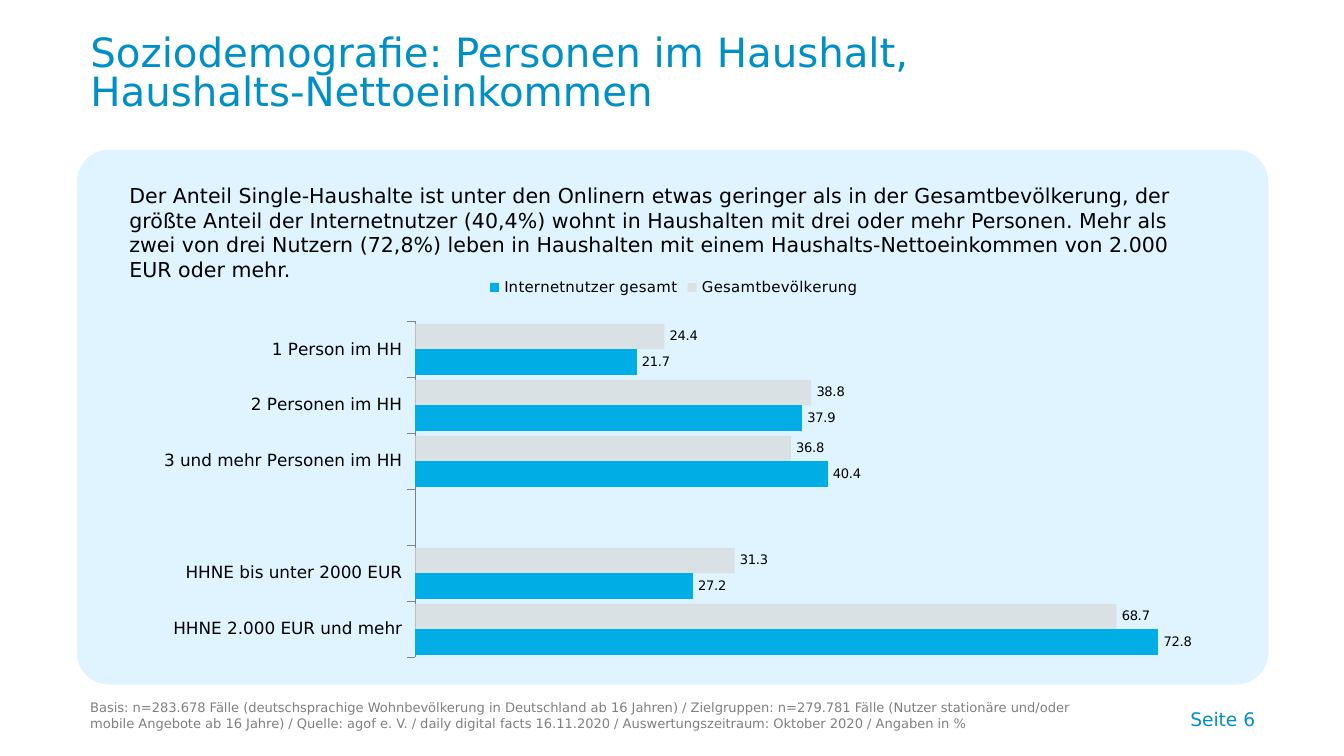
from dataclasses import dataclass

from lxml.etree import SubElement
from pptx import Presentation
from pptx.chart.data import CategoryChartData
from pptx.dml.color import RGBColor
from pptx.enum.chart import XL_CHART_TYPE, XL_LABEL_POSITION, XL_LEGEND_POSITION, XL_TICK_MARK
from pptx.enum.shapes import MSO_SHAPE
from pptx.enum.text import MSO_ANCHOR, MSO_AUTO_SIZE, PP_ALIGN
from pptx.oxml import parse_xml
from pptx.oxml.ns import nsdecls, qn
from pptx.util import Pt

EMU_PER_PX = 9525


@dataclass(frozen=True)
class Theme:
    """Colours, typeface and type sizes of the slide."""

    font: str = "DejaVu Sans"
    heading: str = "0090C5"
    panel: str = "DFF4FF"
    text: str = "000000"
    muted: str = "808080"
    accent: str = "00ADE4"
    neutral: str = "D9D9D9"
    neutral_opacity: int = 70
    title_size: float = 21.6
    body_size: float = 11
    page_size: float = 10
    category_size: float = 9
    legend_size: float = 8
    small_size: float = 7


@dataclass(frozen=True)
class Box:
    """A rectangle in px."""

    left: int
    top: int
    width: int
    height: int

    def inside(self, left, top, width, height):
        """Return a box placed relative to this one."""
        return Box(self.left + left, self.top + top, width, height)

    def emu(self):
        """Return the four lengths in EMU."""
        return [length * EMU_PER_PX for length in (self.left, self.top, self.width, self.height)]


THEME = Theme()
TITLE = "Soziodemografie: Personen im Haushalt, Haushalts-Nettoeinkommen"
SUMMARY = (
    "Der Anteil Single-Haushalte ist unter den Onlinern etwas geringer als in der "
    "Gesamtbevölkerung, der größte Anteil der Internetnutzer (40,4%) wohnt in Haushalten mit "
    "drei oder mehr Personen. Mehr als zwei von drei Nutzern (72,8%) leben in Haushalten mit "
    "einem Haushalts-Nettoeinkommen von 2.000 EUR oder mehr."
)
BASIS = (
    "Basis: n=283.678 Fälle (deutschsprachige Wohnbevölkerung in Deutschland ab 16 Jahren) / "
    "Zielgruppen: n=279.781 Fälle (Nutzer stationäre und/oder mobile Angebote ab 16 Jahre) / "
    "Quelle: agof e. V. / daily digital facts 16.11.2020 / Auswertungszeitraum: Oktober 2020 / "
    "Angaben in %"
)
CATEGORIES = [
    "1 Person im HH",
    "2 Personen im HH",
    "3 und mehr Personen im HH",
    "",
    "HHNE bis unter 2000 EUR",
    "HHNE 2.000 EUR und mehr",
]
SERIES = [
    ("Gesamtbevölkerung", [24.4, 38.8, 36.8, None, 31.3, 68.7], THEME.neutral),
    ("Internetnutzer gesamt", [21.7, 37.9, 40.4, None, 27.2, 72.8], THEME.accent),
]
VALUE_FORMAT = "#,##0.0"


def format_font(font, size, color=THEME.text):
    """Set typeface, size and colour of a font."""
    font.name = THEME.font
    font.size = Pt(size)
    font.color.rgb = RGBColor.from_string(color)


def write_text(shape, text, size, color=THEME.text, align=PP_ALIGN.LEFT,
               anchor=MSO_ANCHOR.TOP, line_spacing=1.0):
    """Fill a shape with one formatted paragraph."""
    frame = shape.text_frame
    frame.word_wrap = True
    frame.auto_size = MSO_AUTO_SIZE.NONE
    frame.vertical_anchor = anchor
    paragraph = frame.paragraphs[0]
    paragraph.alignment = align
    paragraph.line_spacing = line_spacing
    run = paragraph.add_run()
    run.text = text
    format_font(run.font, size, color)


def add_title(slide, box):
    """Place the title placeholder in its box."""
    title = slide.shapes.title
    title.left, title.top, title.width, title.height = box.emu()
    write_text(title, TITLE, THEME.title_size, color=THEME.heading,
               anchor=MSO_ANCHOR.MIDDLE, line_spacing=0.8)


def add_panel(slide, box):
    """Draw the rounded panel with its summary and chart."""
    panel = slide.shapes.add_shape(MSO_SHAPE.ROUNDED_RECTANGLE, *box.emu())
    panel.adjustments[0] = 0.06
    panel.shadow.inherit = False
    panel.fill.solid()
    panel.fill.fore_color.rgb = RGBColor.from_string(THEME.panel)
    panel.line.fill.background()
    summary = slide.shapes.add_textbox(*box.inside(28, 19, 790, 344).emu())
    write_text(summary, SUMMARY, THEME.body_size)
    add_household_chart(slide, box.inside(28, 81, 797, 282))


def add_household_chart(slide, box):
    """Add the bar chart of household size and income."""
    data = CategoryChartData(number_format=VALUE_FORMAT)
    data.categories = CATEGORIES
    for name, values, _ in SERIES:
        data.add_series(name, values)
    chart = slide.shapes.add_chart(XL_CHART_TYPE.BAR_CLUSTERED, *box.emu(), data).chart
    format_font(chart.font, THEME.category_size)
    chart.has_title = False
    chart.has_legend = True
    chart.legend.position = XL_LEGEND_POSITION.TOP
    chart.legend.include_in_layout = False
    format_font(chart.legend.font, THEME.legend_size)
    format_axes(chart)
    format_bars(chart.plots[0])
    soften_neutral_bars(chart)
    clear_background(chart)
    place_plot(chart, x=0.268, y=0.148, w=0.732, h=0.852)


def format_axes(chart):
    """Reverse the categories and hide the value axis."""
    category_axis = chart.category_axis
    category_axis.reverse_order = True
    category_axis.major_tick_mark = XL_TICK_MARK.OUTSIDE
    category_axis.tick_labels.number_format = "@"
    category_axis.tick_labels.number_format_is_linked = False
    category_axis.format.line.color.rgb = RGBColor.from_string(THEME.muted)
    category_axis.format.line.width = Pt(0.75)
    value_axis = chart.value_axis
    value_axis.visible = False
    value_axis.has_major_gridlines = False
    value_axis.minimum_scale = 0
    value_axis.maximum_scale = 80


def format_bars(plot):
    """Colour and label each series."""
    plot.gap_width = 20
    plot.vary_by_categories = False
    for series, (_, _, color) in zip(plot.series, SERIES):
        series.invert_if_negative = False
        series.format.fill.solid()
        series.format.fill.fore_color.rgb = RGBColor.from_string(color)
        labels = series.data_labels
        labels.show_value = True
        labels.position = XL_LABEL_POSITION.OUTSIDE_END
        labels.number_format = VALUE_FORMAT
        labels.number_format_is_linked = False
        format_font(labels.font, THEME.small_size)


def soften_neutral_bars(chart):
    """Make the neutral series partly transparent."""
    for color in chart.element.iter(qn("a:srgbClr")):
        if color.get("val") == THEME.neutral:
            SubElement(color, qn("a:alpha"), val=str(THEME.neutral_opacity * 1000))


def clear_background(chart):
    """Let the panel show through the chart."""
    properties = parse_xml(
        f'<c:spPr {nsdecls("c", "a")}><a:noFill/><a:ln><a:noFill/></a:ln></c:spPr>'
    )
    chart.element.find(qn("c:txPr")).addprevious(properties)


def place_plot(chart, **fractions):
    """Fix the inner plot area as fractions of the chart."""
    plot_area = chart.element.find(qn("c:chart")).find(qn("c:plotArea"))
    for layout in plot_area.findall(qn("c:layout")):
        plot_area.remove(layout)
    settings = {"layoutTarget": "inner", "xMode": "edge", "yMode": "edge", **fractions}
    children = "".join(f'<c:{tag} val="{value}"/>' for tag, value in settings.items())
    plot_area.insert(0, parse_xml(
        f'<c:layout {nsdecls("c")}><c:manualLayout>{children}</c:manualLayout></c:layout>'
    ))


def add_footer(slide, box):
    """Write the survey basis and the page number."""
    basis = slide.shapes.add_textbox(*box.inside(0, 0, 743, 37).emu())
    write_text(basis, BASIS, THEME.small_size, color=THEME.muted, anchor=MSO_ANCHOR.BOTTOM)
    page = slide.shapes.add_textbox(*box.inside(box.width - 277, 0, 277, 36).emu())
    write_text(page, "Seite 6", THEME.page_size, color=THEME.heading,
               align=PP_ALIGN.RIGHT, anchor=MSO_ANCHOR.BOTTOM)


def main():
    """Build and save the presentation."""
    presentation = Presentation()
    presentation.slide_width = 960 * EMU_PER_PX
    presentation.slide_height = 540 * EMU_PER_PX
    slide = presentation.slides.add_slide(presentation.slide_layouts[5])
    add_title(slide, Box(55, 27, 704, 54))
    add_panel(slide, Box(55, 107, 851, 382))
    add_footer(slide, Box(55, 490, 851, 37))
    presentation.save("out.pptx")


if __name__ == "__main__":
    main()
